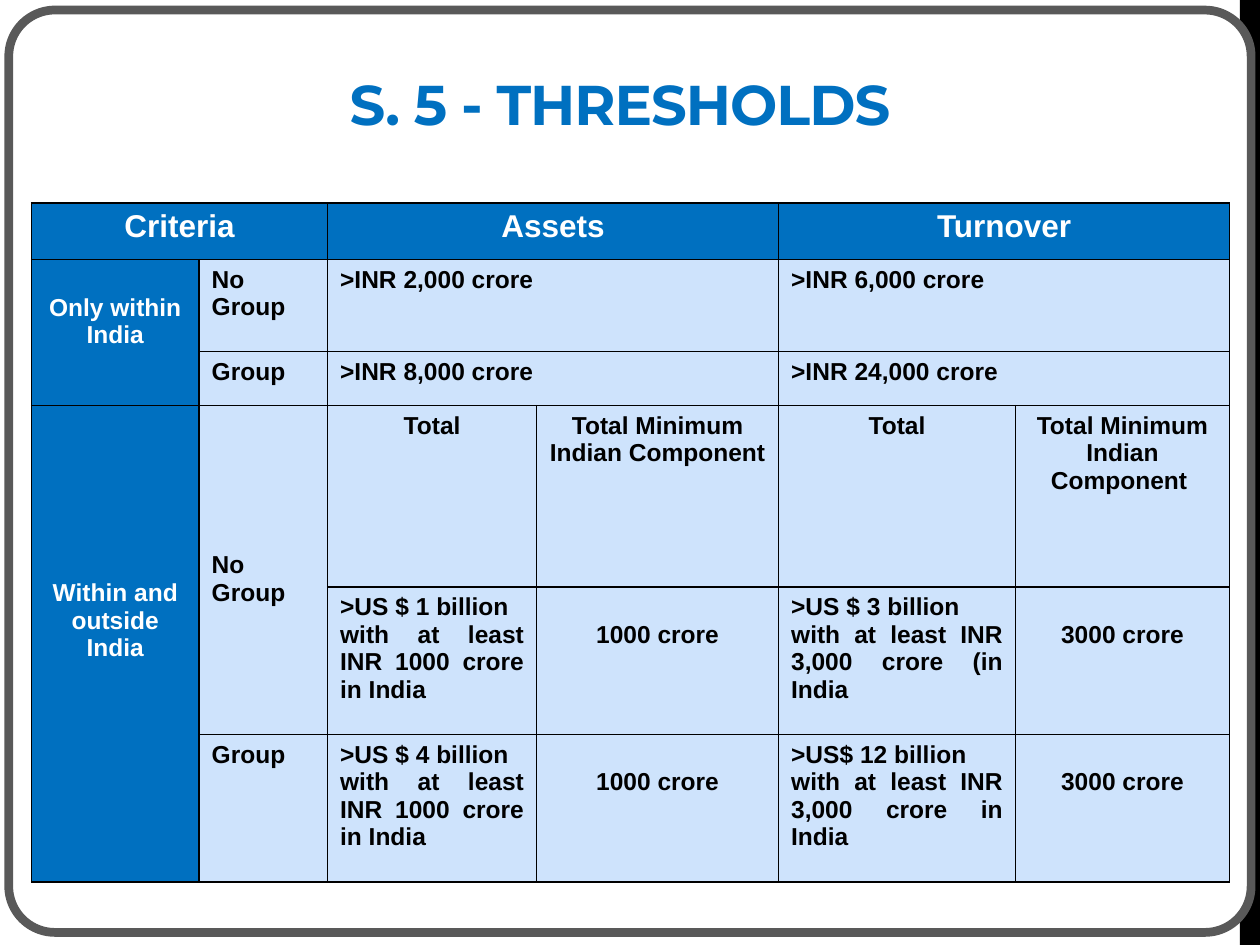
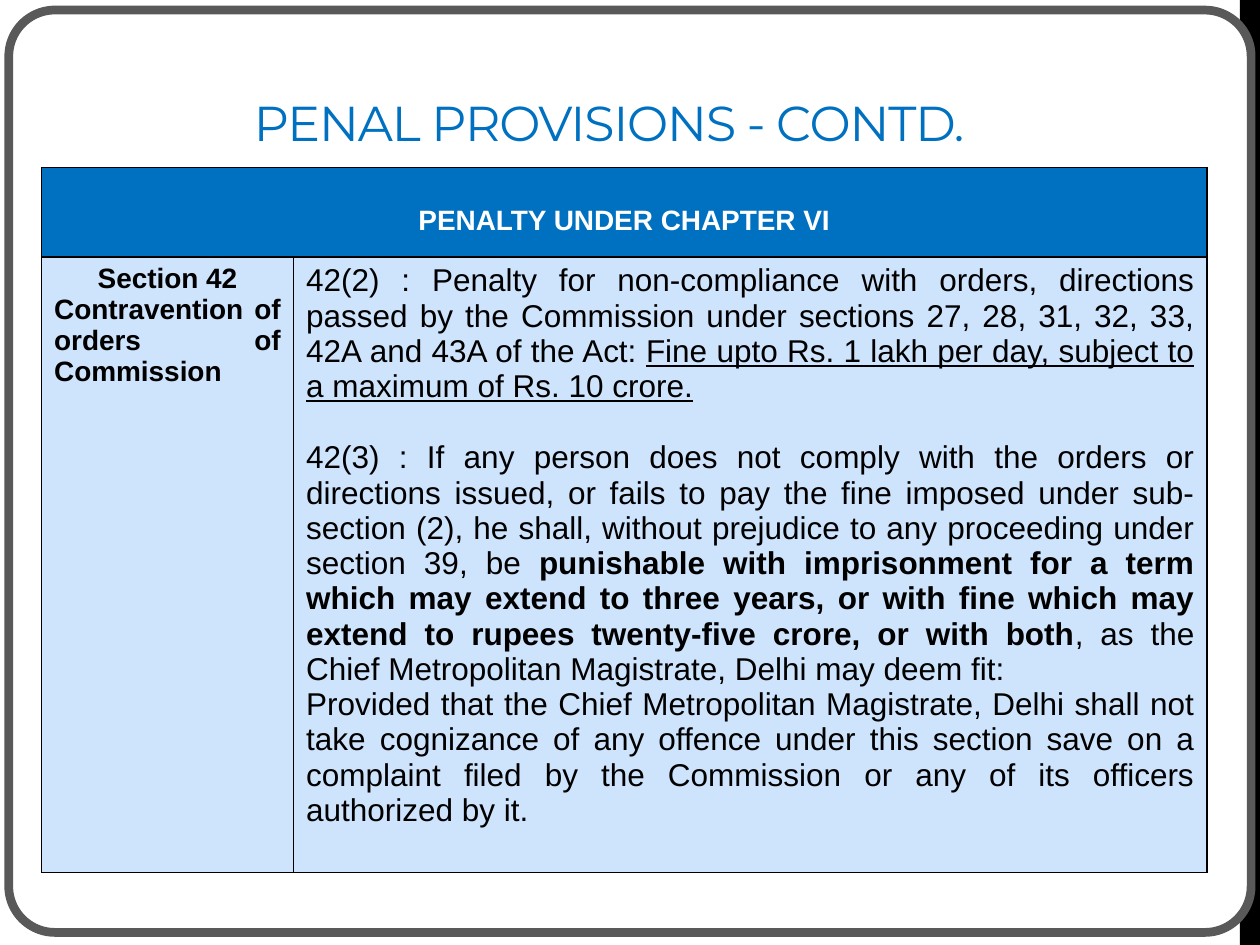
from lxml.etree import SubElement
from pptx import Presentation
from pptx.dml.color import RGBColor
from pptx.enum.shapes import MSO_SHAPE
from pptx.enum.text import MSO_ANCHOR, PP_ALIGN
from pptx.oxml.ns import qn
from pptx.util import Inches, Pt

BLUE = RGBColor(0x00, 0x70, 0xC0)
PALE = RGBColor(0xCE, 0xE3, 0xFC)
WHITE = RGBColor(0xFF, 0xFF, 0xFF)
BLACK = RGBColor(0x00, 0x00, 0x00)
GREY = RGBColor(0x59, 0x59, 0x59)
LEFT, CENTER, JUSTIFY = PP_ALIGN.LEFT, PP_ALIGN.CENTER, PP_ALIGN.JUSTIFY

deck = Presentation()
deck.slide_width, deck.slide_height = Inches(10), Inches(7.5)
COLUMN = deck.slide_width / 100
ROW = deck.slide_height / 75


def place(left, top, width, height):
    return [int(n * unit) for n, unit in zip((left, top, width, height), (COLUMN, ROW) * 2)]


def write_cell(cell, text, size, align, lines_above=0, header=False, bold=True):
    cell.margin_top = Inches(0.05) + int(lines_above * Pt(size) * 1.14)
    cell.fill.solid()
    cell.fill.fore_color.rgb = BLUE if header else PALE
    cell.text_frame.text = text
    for paragraph in cell.text_frame.paragraphs:
        paragraph.alignment = align
        for run in paragraph.runs:
            for name, value in {"name": "Arial", "size": Pt(size), "bold": bold}.items():
                setattr(run.font, name, value)
            run.font.color.rgb = WHITE if header else BLACK


layouts = [
    {
        "title": "S. 5 - THRESHOLDS",
        "box": (11.7, 5, 75, 9.9),
        "font": {"name": "Montserrat", "size": Pt(32), "bold": True},
        "anchor": MSO_ANCHOR.TOP,
        "origin": (2.5, 16.1),
        "columns": [13.3, 10.2, 16.6, 19.2, 18.8, 17],
        "rows": [4.5, 7.3, 4.3, 14.4, 11.7, 11.7],
    },
    {
        "title": "PENAL PROVISIONS - CONTD. ",
        "box": (9.2, 1.7, 79.2, 10.8),
        "font": {"name": "Montserrat", "size": Pt(28), "bold": False},
        "anchor": MSO_ANCHOR.BOTTOM,
        "origin": (3.3, 13.3),
        "columns": [20, 72.5],
        "rows": [7.1, 45.7],
    },
]

tables = []
for layout in layouts:
    slide = deck.slides.add_slide(deck.slide_layouts[6])
    for top, height in ((0, 15), (15, 60)):
        band = slide.shapes.add_shape(MSO_SHAPE.RECTANGLE, *place(98.4, top, 1.6, height))
        band.shadow.inherit = False
        band.fill.solid()
        band.fill.fore_color.rgb = BLACK
        band.line.fill.background()
    frame = slide.shapes.add_shape(MSO_SHAPE.ROUNDED_RECTANGLE, *place(0.7, 0.8, 98.6, 73.2))
    frame.adjustments[0] = 0.05
    frame.shadow.inherit = False
    frame.fill.solid()
    frame.fill.fore_color.rgb = WHITE
    frame.line.color.rgb = GREY
    frame.line.width = Pt(5)

    heading = slide.shapes.add_textbox(*place(*layout["box"])).text_frame
    heading.word_wrap = True
    heading.vertical_anchor = layout["anchor"]
    heading.text = layout["title"]
    heading.paragraphs[0].alignment = CENTER
    title_run = heading.paragraphs[0].runs[0]
    for name, value in layout["font"].items():
        setattr(title_run.font, name, value)
    title_run.font.color.rgb = BLUE
    title_run.font._element.set("spc", "-60")

    columns, rows = layout["columns"], layout["rows"]
    table = slide.shapes.add_table(
        len(rows), len(columns), *place(*layout["origin"], sum(columns), sum(rows))
    ).table
    table.first_row = table.horz_banding = False
    for column, width in zip(table.columns, columns):
        column.width = int(width * COLUMN)
    for row, height in zip(table.rows, rows):
        row.height = int(height * ROW)
    for cell in table.iter_cells():
        properties = cell._tc.get_or_add_tcPr()
        for side in ("a:lnL", "a:lnR", "a:lnT", "a:lnB"):
            edge = SubElement(properties, qn(side), w=str(Pt(1)))
            ink = SubElement(edge, qn("a:solidFill"))
            SubElement(ink, qn("a:srgbClr"), val=str(BLACK))
        cell.fill.solid()
        cell.fill.fore_color.rgb = PALE
    tables.append(table)

thresholds, penalties = tables

for column, label in enumerate(("Criteria", "Assets", "Turnover")):
    criterion = thresholds.cell(0, column * 2)
    criterion.merge(thresholds.cell(0, column * 2 + 1))
    write_cell(criterion, label, 18, CENTER, header=True)

for first, last, lines_above, scope in (
    (1, 2, 1, "Only within\nIndia"),
    (3, 5, 6, "Within and\noutside\nIndia"),
):
    thresholds.cell(first, 0).merge(thresholds.cell(last, 0))
    write_cell(thresholds.cell(first, 0), scope, 14, CENTER, lines_above, header=True)

thresholds.cell(3, 1).merge(thresholds.cell(4, 1))
for row, lines_above, group in (
    (1, 0, "No\nGroup"), (2, 0, "Group"), (3, 5, "No\nGroup"), (5, 0, "Group"),
):
    write_cell(thresholds.cell(row, 1), group, 14, LEFT, lines_above)

for row, limits in (
    (1, (">INR 2,000 crore", ">INR 6,000 crore")),
    (2, (">INR 8,000 crore", ">INR 24,000 crore")),
):
    for column, limit in zip((2, 4), limits):
        thresholds.cell(row, column).merge(thresholds.cell(row, column + 1))
        write_cell(thresholds.cell(row, column), limit, 14, JUSTIFY)

for column, component, no_group, group in (
    (2, "1000 crore",
     ">US $ 1 billion\nwith at least INR 1000 crore in India",
     ">US $ 4 billion\nwith at least INR 1000 crore in India"),
    (4, "3000 crore",
     ">US $ 3 billion\nwith at least INR 3,000 crore (in India",
     ">US$ 12 billion\nwith at least INR 3,000 crore in India"),
):
    write_cell(thresholds.cell(3, column), "Total", 14, CENTER)
    write_cell(thresholds.cell(3, column + 1), "Total Minimum Indian Component ", 14, CENTER)
    for row, total in ((4, no_group), (5, group)):
        write_cell(thresholds.cell(row, column), total, 14, JUSTIFY)
        write_cell(thresholds.cell(row, column + 1), component, 14, CENTER, 1)

penalties.cell(0, 0).merge(penalties.cell(0, 1))
write_cell(penalties.cell(0, 0), "PENALTY UNDER CHAPTER VI", 16, CENTER, 1, header=True)

section = penalties.cell(1, 0)
write_cell(section, "Section 42\nContravention of orders of Commission", 16, JUSTIFY)
section.text_frame.paragraphs[0].alignment = CENTER

provisions = penalties.cell(1, 1)
write_cell(
    provisions,
    "42(2) : Penalty for non-compliance with orders, directions passed by the Commission "
    "under sections 27, 28, 31, 32, 33, 42A and 43A of the Act: \n"
    "42(3) : If any person does not comply with the orders or directions issued, or fails to "
    "pay the fine imposed under sub-section (2), he shall, without prejudice to any "
    "proceeding under section 39, be \n"
    "Provided that the Chief Metropolitan Magistrate, Delhi shall not take cognizance of any "
    "offence under this section save on a complaint filed by the Commission or any of its "
    "officers authorized by it.",
    18, JUSTIFY, bold=False,
)
fine, imprisonment, proviso = provisions.text_frame.paragraphs
imprisonment.space_before = Pt(20.5)
for paragraph, text, emphasis in (
    (fine, "Fine upto Rs. 1 lakh per day, subject to a maximum of Rs. 10 crore.",
     {"underline": True}),
    (imprisonment, "punishable with imprisonment for a term which may extend to three years, "
     "or with fine which may extend to rupees twenty-five crore, or with both", {"bold": True}),
    (imprisonment, ", as the Chief Metropolitan Magistrate, Delhi may deem fit:", {}),
):
    run = paragraph.add_run()
    run.text = text
    for name, value in {"name": "Arial", "size": Pt(18), "bold": False, **emphasis}.items():
        setattr(run.font, name, value)
    run.font.color.rgb = BLACK

deck.save("out.pptx")
